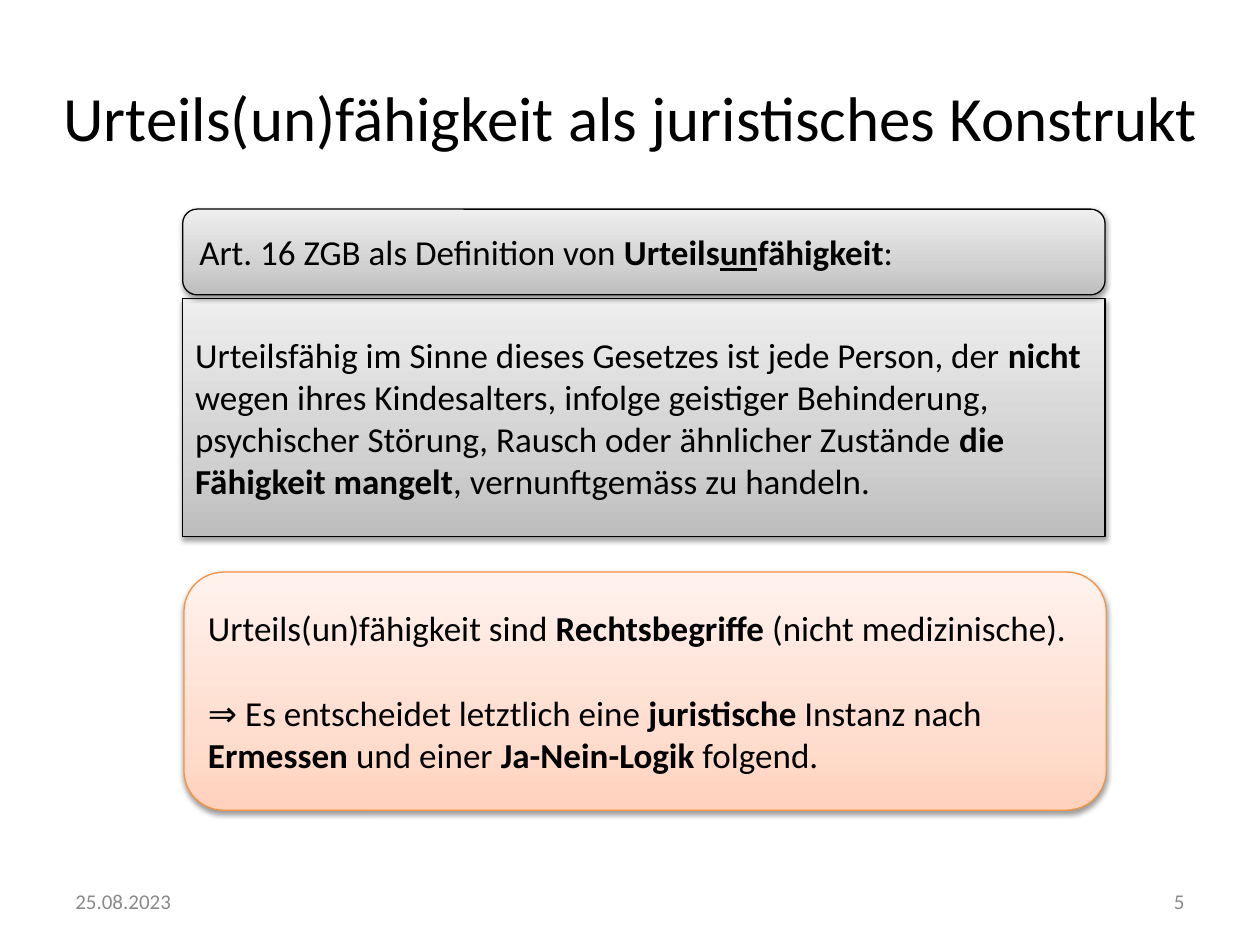
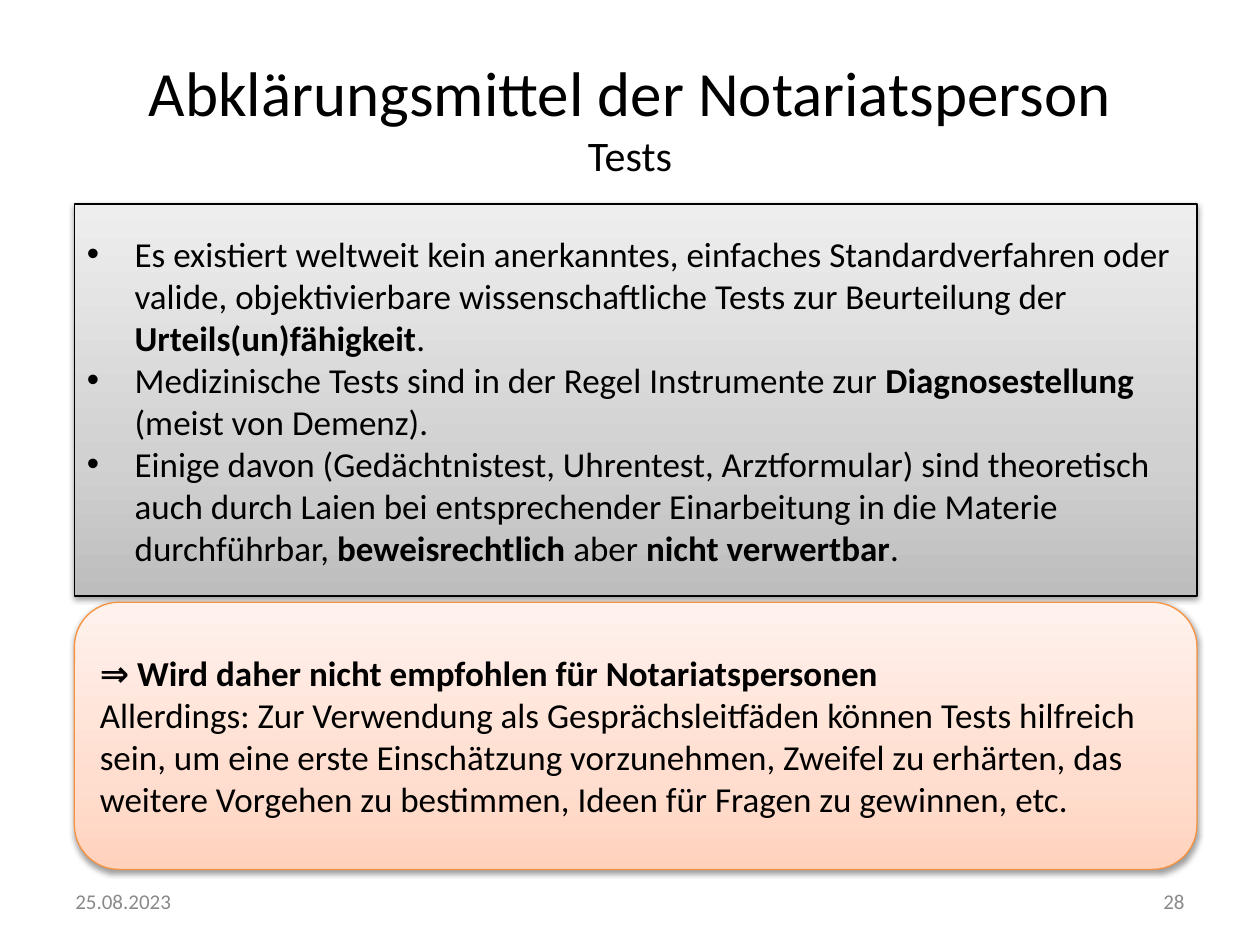
"""Builds two slides on legal capacity and its assessment by notaries."""
from dataclasses import dataclass

from lxml import etree
from pptx import Presentation
from pptx import util as u
from pptx.dml.color import RGBColor
from pptx.enum import shapes, text
from pptx.oxml import ns


@dataclass(frozen=True)
class Theme:
    font: str = "Calibri"
    ink: str = "000000"
    muted: str = "8A8A8A"
    title_size: int = 36
    subtitle_size: int = 24
    body_size: int = 20
    footer_size: int = 12
    hanging: float = 0.38
    line_width: float = 0.75


THEME = Theme()
GRADIENT_POSITIONS = (0, 35, 100)
PANEL_STYLES = {
    "law": {"line": "000000", "gradient": ("BDBDBD", "D1D1D1", "EEEEEE")},
    "conclusion": {"line": "F69240", "gradient": ("FFD2BD", "FFDED0", "FFF2ED")},
}
RECTANGLE = shapes.MSO_SHAPE.RECTANGLE
ROUNDED = shapes.MSO_SHAPE.ROUNDED_RECTANGLE
DATE = "25.08.2023"

SLIDES = [
    {
        "title": "Urteils(un)fähigkeit als juristisches Konstrukt",
        "title_box": (0.28, 0.21, 9.45, 1.42),
        "number": "5",
        "panels": [
            {
                "style": "law", "shape": RECTANGLE, "box": (1.45, 2.37, 7.32, 1.89),
                "paragraphs": [
                    [("Urteilsfähig im Sinne dieses Gesetzes ist jede Person, der ", ""),
                     ("nicht", "b"),
                     (" wegen ihres Kindesalters, infolge geistiger Behinderung, "
                      "psychischer Störung, Rausch oder ähnlicher Zustände ", ""),
                     ("die Fähigkeit mangelt", "b"),
                     (", vernunftgemäss zu handeln.", "")],
                ],
            },
            {
                "style": "conclusion", "shape": ROUNDED, "box": (1.46, 4.54, 7.32, 1.89),
                "gap": 24.4,
                "paragraphs": [
                    [("Urteils(un)fähigkeit sind ", ""), ("Rechtsbegriffe ", "b"),
                     ("(nicht medizinische).", "")],
                    [("⇒ Es entscheidet letztlich eine ", ""), ("juristische", "b"),
                     (" Instanz nach ", ""), ("Ermessen", "b"), (" und einer ", ""),
                     ("Ja-Nein-Logik", "b"), (" folgend.", "")],
                ],
            },
            {
                "style": "law", "shape": ROUNDED, "box": (1.45, 1.66, 7.32, 0.68),
                "paragraphs": [
                    [("Art. 16 ZGB als Definition von ", ""), ("Urteils", "b"),
                     ("un", "bu"), ("fähigkeit", "b"), (":", "")],
                ],
            },
        ],
    },
    {
        "title": "Abklärungsmittel der Notariatsperson",
        "subtitle": "Tests",
        "title_box": (0.5, 0.3, 9, 1.25),
        "number": "28",
        "panels": [
            {
                "style": "law", "shape": RECTANGLE, "box": (0.59, 1.62, 8.91, 3.11),
                "bullets": True,
                "paragraphs": [
                    [("Es existiert weltweit kein anerkanntes, einfaches Standardverfahren "
                      "oder valide, objektivierbare wissenschaftliche Tests zur "
                      "Beurteilung der ", ""),
                     ("Urteils(un)fähigkeit", "b"), (".", "")],
                    [("Medizinische Tests sind in der Regel Instrumente zur ", ""),
                     ("Diagnosestellung", "b"), (" (meist von Demenz).", "")],
                    [("Einige davon (Gedächtnistest, Uhrentest, Arztformular) sind "
                      "theoretisch auch durch Laien bei entsprechender Einarbeitung in "
                      "die Materie durchführbar, ", ""),
                     ("beweisrechtlich ", "b"), ("aber", ""),
                     (" nicht verwertbar", "b"), (".", "")],
                ],
            },
            {
                "style": "conclusion", "shape": ROUNDED, "box": (0.59, 4.78, 8.91, 2.12),
                "paragraphs": [
                    [("⇒ Wird daher nicht empfohlen für Notariatspersonen", "b")],
                    [("Allerdings: Zur Verwendung als Gesprächsleitfäden können Tests "
                      "hilfreich sein, um eine erste Einschätzung vorzunehmen, Zweifel zu "
                      "erhärten, das weitere Vorgehen zu bestimmen, Ideen für Fragen zu "
                      "gewinnen, etc.", "")],
                ],
            },
        ],
    },
]


def add_element(parent, tag, **attributes):
    element = etree.SubElement(parent, ns.qn(tag))
    for name, value in attributes.items():
        element.set(name, str(value))
    return element


def inches(box):
    return [u.Inches(length) for length in box]


def format_paragraph(paragraph, size, color=THEME.ink, align=text.PP_ALIGN.LEFT):
    paragraph.alignment = align
    paragraph.font.name = THEME.font
    paragraph.font.size = u.Pt(size)
    paragraph.font.color.rgb = RGBColor.from_string(color)


def set_title(slide, content):
    title = slide.shapes.title
    title.left, title.top, title.width, title.height = inches(content["title_box"])
    title.text_frame.vertical_anchor = text.MSO_ANCHOR.MIDDLE
    paragraph = title.text_frame.paragraphs[0]
    format_paragraph(paragraph, THEME.title_size, align=text.PP_ALIGN.CENTER)
    paragraph.add_run().text = content["title"]
    if "subtitle" in content:
        paragraph.add_line_break()
        subtitle = paragraph.add_run()
        subtitle.text = content["subtitle"]
        subtitle.font.size = u.Pt(THEME.subtitle_size)


def add_footer(slide, left, value, align):
    footer = slide.shapes.add_textbox(*inches((left, 6.95, 2.33, 0.4)))
    frame = footer.text_frame
    frame.word_wrap = True
    frame.vertical_anchor = text.MSO_ANCHOR.MIDDLE
    frame.text = value
    format_paragraph(frame.paragraphs[0], THEME.footer_size, THEME.muted, align)


def style_panel(shape, style):
    shape.fill.gradient()
    shape.fill.gradient_angle = 90
    stops = shape._element.spPr.find(".//" + ns.qn("a:gsLst"))
    for stop in list(stops):
        stops.remove(stop)
    for position, color in zip(GRADIENT_POSITIONS, style["gradient"]):
        stop = add_element(stops, "a:gs", pos=position * 1000)
        add_element(stop, "a:srgbClr", val=color)
    shape.line.color.rgb = RGBColor.from_string(style["line"])
    shape.line.width = u.Pt(THEME.line_width)
    shape.shadow.inherit = False
    effects = shape._element.spPr.find(ns.qn("a:effectLst"))
    shadow = add_element(effects, "a:outerShdw", blurRad=u.Pt(3.1), dist=u.Pt(1.6),
                         dir=90 * 60000, rotWithShape=0)
    color = add_element(shadow, "a:srgbClr", val="000000")
    add_element(color, "a:alpha", val=38000)


def add_bullet(paragraph):
    properties = paragraph._p.get_or_add_pPr()
    indent = u.Inches(THEME.hanging)
    properties.set("marL", str(indent))
    properties.set("indent", str(-indent))
    add_element(properties, "a:buFont", typeface="Arial")
    add_element(properties, "a:buChar", char="•")


def add_panel(slide, panel):
    shape = slide.shapes.add_shape(panel["shape"], *inches(panel["box"]))
    style_panel(shape, PANEL_STYLES[panel["style"]])
    frame = shape.text_frame
    frame.word_wrap = True
    frame.vertical_anchor = text.MSO_ANCHOR.MIDDLE
    for index, runs in enumerate(panel["paragraphs"]):
        paragraph = frame.add_paragraph() if index else frame.paragraphs[0]
        if index and "gap" in panel:
            paragraph.space_before = u.Pt(panel["gap"])
        if panel.get("bullets"):
            add_bullet(paragraph)
        format_paragraph(paragraph, THEME.body_size)
        for wording, emphasis in runs:
            run = paragraph.add_run()
            run.text = wording
            if "b" in emphasis:
                run.font.bold = True
            if "u" in emphasis:
                run.font.underline = True


def main():
    presentation = Presentation()
    presentation.slide_width, presentation.slide_height = inches((10, 7.5))
    title_only = presentation.slide_layouts[5]
    for content in SLIDES:
        slide = presentation.slides.add_slide(title_only)
        set_title(slide, content)
        add_footer(slide, 0.5, DATE, text.PP_ALIGN.LEFT)
        add_footer(slide, 7.17, content["number"], text.PP_ALIGN.RIGHT)
        for panel in content["panels"]:
            add_panel(slide, panel)
    presentation.save("out.pptx")


if __name__ == "__main__":
    main()
